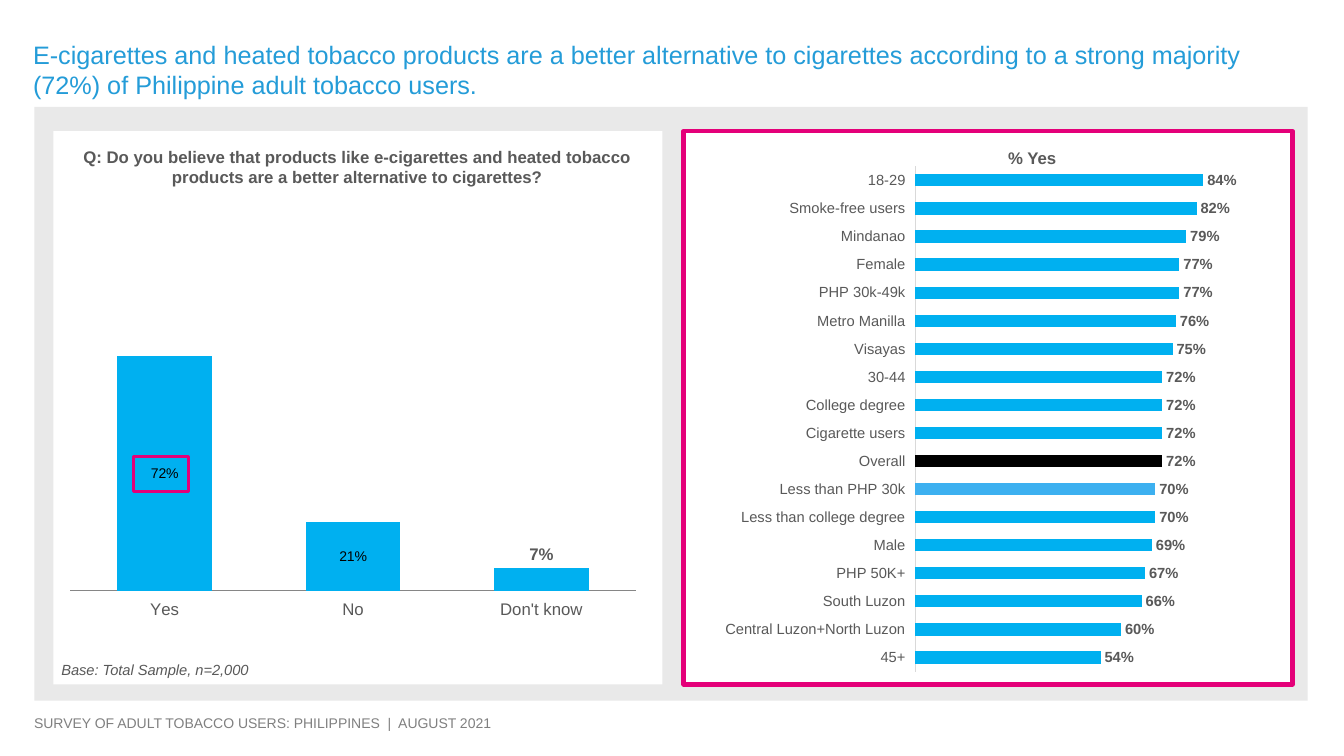
from dataclasses import dataclass

from lxml import etree
from pptx import Presentation
from pptx.chart.data import CategoryChartData
from pptx.dml.color import RGBColor
from pptx.enum.chart import XL_CHART_TYPE, XL_LABEL_POSITION, XL_TICK_LABEL_POSITION, XL_TICK_MARK
from pptx.enum.shapes import MSO_SHAPE
from pptx.enum.text import PP_ALIGN
from pptx.oxml.ns import qn
from pptx.util import Inches, Pt

COLUMN, BAR = XL_CHART_TYPE.COLUMN_CLUSTERED, XL_CHART_TYPE.BAR_CLUSTERED
CENTER, OUTSIDE_END = XL_LABEL_POSITION.CENTER, XL_LABEL_POSITION.OUTSIDE_END
LOW, NO_TICK = XL_TICK_LABEL_POSITION.LOW, XL_TICK_MARK.NONE
RECTANGLE = MSO_SHAPE.RECTANGLE
LEFT_ALIGN, CENTER_ALIGN = PP_ALIGN.LEFT, PP_ALIGN.CENTER


@dataclass(frozen=True)
class Theme:
    font: str = "Arial"
    white: RGBColor = RGBColor(0xFF, 0xFF, 0xFF)
    black: RGBColor = RGBColor(0, 0, 0)
    panel: RGBColor = RGBColor(0xE9, 0xE9, 0xE9)
    accent: RGBColor = RGBColor(0xE4, 0x00, 0x79)
    title: RGBColor = RGBColor(0x24, 0x9C, 0xD8)
    text: RGBColor = RGBColor(0x59, 0x59, 0x59)
    footer: RGBColor = RGBColor(0x80, 0x80, 0x80)
    bar: RGBColor = RGBColor(0x00, 0xB0, 0xF0)
    light_bar: RGBColor = RGBColor(0x3C, 0xB0, 0xF0)
    column_axis: RGBColor = RGBColor(0x86, 0x86, 0x86)
    bar_axis: RGBColor = RGBColor(0xD9, 0xD9, 0xD9)
    title_size: Pt = Pt(18)
    heading_size: Pt = Pt(12)
    detail_size: Pt = Pt(10.5)
    small_size: Pt = Pt(10)


theme = Theme()


def style_font(font, size, color, bold=False, italic=False):
    font.name, font.size = theme.font, size
    font.color.rgb = color
    font.bold, font.italic = bold, italic


def add_percent_chart(chart_type, box, answers, gap, plot_area, label_size, axis_color):
    """Add a one-series chart on a hidden 0-100% axis, with a fixed plot area."""
    data = CategoryChartData(number_format="0%")
    data.categories = list(answers)
    data.add_series("Series 1", list(answers.values()))
    chart = slide.shapes.add_chart(chart_type, *map(Inches, box), data).chart
    chart.has_legend = chart.has_title = False
    style_font(chart.font, label_size, theme.text)

    value_axis = chart.value_axis
    value_axis.minimum_scale, value_axis.maximum_scale = 0, 1
    value_axis.has_major_gridlines = value_axis.visible = False
    category_axis = chart.category_axis
    category_axis.major_tick_mark = category_axis.minor_tick_mark = NO_TICK
    category_axis.tick_label_position = LOW
    category_axis.format.line.color.rgb = axis_color
    category_axis.format.line.width = Pt(0.75)

    plot = chart.plots[0]
    plot.gap_width, plot.vary_by_categories = gap, False
    series = plot.series[0]
    series.format.fill.solid()
    series.format.fill.fore_color.rgb = theme.bar
    labels = series.data_labels
    labels.show_value, labels.position = True, OUTSIDE_END
    labels.number_format, labels.number_format_is_linked = "0%", False
    style_font(labels.font, label_size, theme.text, bold=True)

    plot_element = chart.element.find(".//" + qn("c:plotArea"))
    for layout in plot_element.findall(qn("c:layout")):
        plot_element.remove(layout)
    layout = etree.Element(qn("c:layout"))
    manual = etree.SubElement(layout, qn("c:manualLayout"))
    settings = [("layoutTarget", "inner"), ("xMode", "edge"), ("yMode", "edge"), *zip("xywh", plot_area)]
    for name, value in settings:
        etree.SubElement(manual, qn(f"c:{name}")).set("val", str(value))
    plot_element.insert(0, layout)
    return series


presentation = Presentation()
presentation.slide_width, presentation.slide_height = Inches(13.33), Inches(7.5)
slide = presentation.slides.add_slide(presentation.slide_layouts[6])

# Background panel, the two cards and the frame around the leading answer
frames = [
    ((0.34, 1.06, 12.63, 5.89), theme.panel, None),
    ((0.53, 1.3, 6.04, 5.49), theme.white, None),
    ((6.78, 1.3, 6.04, 5.49), theme.white, 3),
]
answer_frame = ((1.32, 4.53, 0.55, 0.35), None, 2.25)

answers = {"Yes": 0.72, "No": 0.21, "Don't know": 0.07}
groups = {
    "45+": 0.54,
    "Central Luzon+North Luzon": 0.60,
    "South Luzon": 0.66,
    "PHP 50K+": 0.67,
    "Male": 0.69,
    "Less than college degree": 0.70,
    "Less than PHP 30k": 0.70,
    "Overall": 0.72,
    "Cigarette users": 0.72,
    "College degree": 0.72,
    "30-44": 0.72,
    "Visayas": 0.75,
    "Metro Manilla": 0.76,
    "PHP 30k-49k": 0.77,
    "Female": 0.77,
    "Mindanao": 0.79,
    "Smoke-free users": 0.82,
    "18-29": 0.84,
}

for box, fill, line_width in frames + [answer_frame]:
    if fill is None:
        # The answer frame lies over the columns, so they come first
        column_series = add_percent_chart(
            COLUMN, (0.53, 1.42, 6.01, 5.01), answers, 100,
            (0.028, 0.241, 0.933, 0.646), theme.heading_size, theme.column_axis)
    shape = slide.shapes.add_shape(RECTANGLE, *map(Inches, box))
    shape.shadow.inherit = False
    if fill is None:
        shape.fill.background()
    else:
        shape.fill.solid()
        shape.fill.fore_color.rgb = fill
    if line_width:
        shape.line.color.rgb = theme.accent
        shape.line.width = Pt(line_width)
    else:
        shape.line.fill.background()

for index in (0, 1):
    label = column_series.points[index].data_label
    style_font(label.font, theme.small_size, theme.black)
    label.position = CENTER

group_series = add_percent_chart(
    BAR, (6.81, 1.3, 6.02, 5.49), groups, 130,
    (0.377, 0.064, 0.565, 0.913), theme.detail_size, theme.bar_axis)
for group, color in (("Less than PHP 30k", theme.light_bar), ("Overall", theme.black)):
    fill = group_series.points[list(groups).index(group)].format.fill
    fill.solid()
    fill.fore_color.rgb = color

# Box, wording, size, colour, bold, italic, alignment
texts = [
    ((0.23, 0.34, 12.77, 0.68),
     "E-cigarettes and heated tobacco products are a better alternative to cigarettes "
     "according to a strong majority (72%) of Philippine adult tobacco users.",
     theme.title_size, theme.title, False, False, LEFT_ALIGN),
    ((0.63, 1.41, 5.83, 0.5),
     "Q: Do you believe that products like e-cigarettes and heated tobacco products "
     "are a better alternative to cigarettes?",
     theme.heading_size, theme.text, True, False, CENTER_ALIGN),
    ((9.9, 1.42, 1.05, 0.3), "% Yes",
     theme.heading_size, theme.text, True, False, LEFT_ALIGN),
    ((0.51, 6.51, 4.65, 0.29), "Base: Total Sample, n=2,000",
     theme.detail_size, theme.text, False, True, LEFT_ALIGN),
    ((0.24, 7.04, 12.43, 0.27), "SURVEY OF ADULT TOBACCO USERS: PHILIPPINES\u00a0 |\u00a0 AUGUST 2021".replace("\u00a0", " "),
     theme.small_size, theme.footer, False, False, LEFT_ALIGN),
]
for box, wording, size, color, bold, italic, alignment in texts:
    text_frame = slide.shapes.add_textbox(*map(Inches, box)).text_frame
    text_frame.word_wrap = True
    text_frame.text = wording
    paragraph = text_frame.paragraphs[0]
    paragraph.alignment = alignment
    style_font(paragraph.runs[0].font, size, color, bold, italic)

presentation.save("out.pptx")
